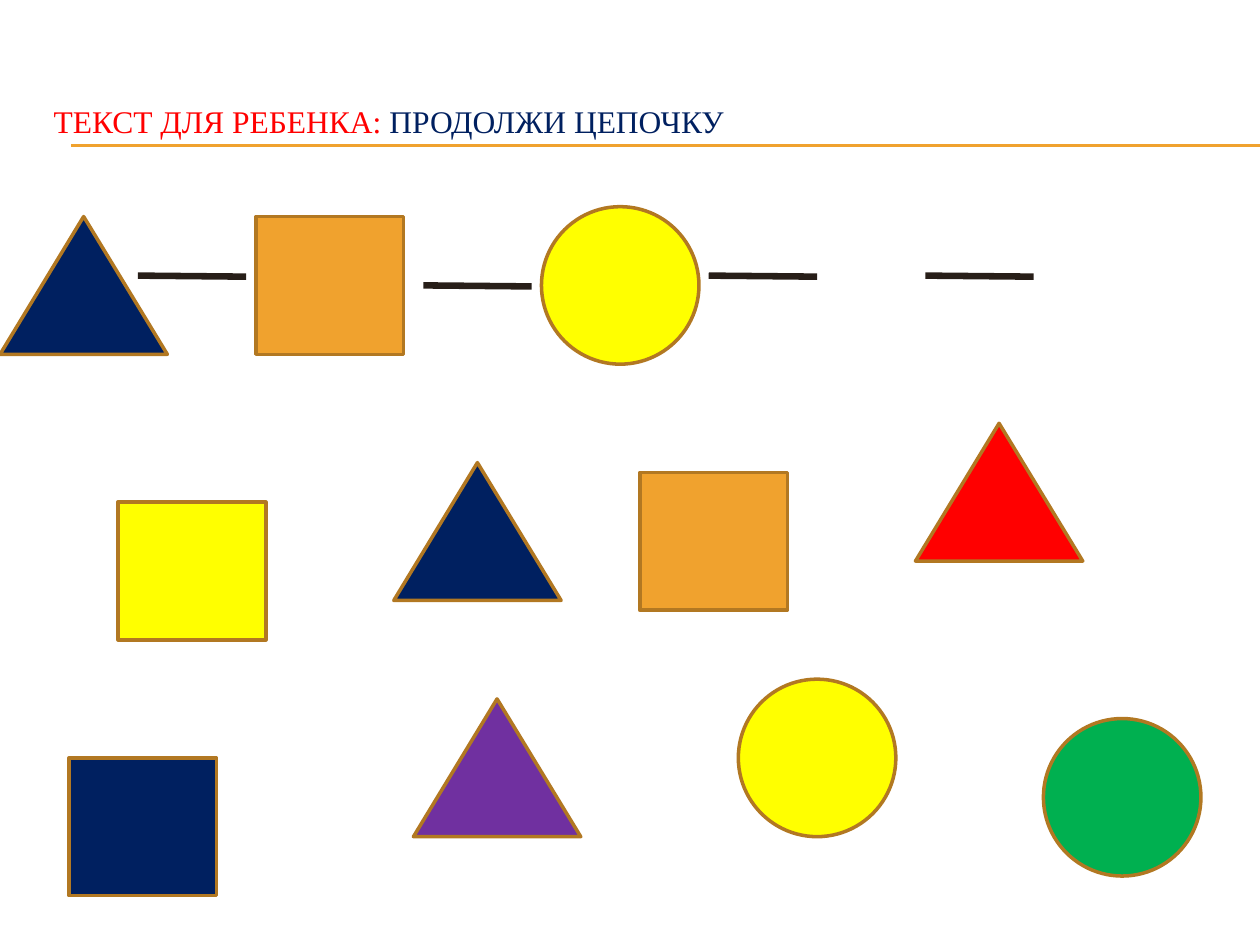
from pptx import Presentation
from pptx.dml.color import RGBColor
from pptx.enum.shapes import MSO_CONNECTOR, MSO_SHAPE
from pptx.enum.text import MSO_ANCHOR
from pptx.oxml.ns import qn
from pptx.util import Pt
from lxml import etree

HUES = {
    "navy": "002060", "orange": "F0A22E", "yellow": "FFFF00", "red": "FF0000",
    "green": "00B050", "purple": "7030A0", "edge": "B27822", "dash": "271E18",
}
# Preset, width and height of each kind of figure
KINDS = {
    "triangle": (MSO_SHAPE.ISOSCELES_TRIANGLE, 95.6, 78.75),
    "square": (MSO_SHAPE.RECTANGLE, 84.4, 78.75),
    "circle": (MSO_SHAPE.OVAL, 90, 90),
}


def tint(name):
    return RGBColor.from_string(HUES[name])


def draw_line(x1, y1, x2, y2, hue, width):
    line = slide.shapes.add_connector(
        MSO_CONNECTOR.STRAIGHT, Pt(x1), Pt(y1), Pt(x2), Pt(y2))
    line.line.color.rgb = tint(hue)
    line.line.width = Pt(width)
    etree.SubElement(line._element.spPr, qn("a:effectLst"))


deck = Presentation()
deck.slide_width, deck.slide_height = Pt(720), Pt(540)
slide = deck.slides.add_slide(deck.slide_layouts[6])

# Double rule under the title
for y in (82.8, 83.4):
    draw_line(40.5, y, 720, y, "orange", 0.75)

# Title
box = slide.shapes.add_textbox(Pt(23.6), Pt(36), Pt(684), Pt(66.4))
frame = box.text_frame
frame.word_wrap = True
frame.vertical_anchor = MSO_ANCHOR.MIDDLE
for text, hue in (("ТЕКСТ ДЛЯ РЕБЕНКА: ", "red"), ("ПРОДОЛЖИ ЦЕПОЧКУ", "navy")):
    run = frame.paragraphs[0].add_run()
    run.text = text
    run.font.name = "Times New Roman"
    run.font.size = Pt(18)
    run.font.color.rgb = tint(hue)

# Figures: the chain on top, then the choices below
figures = [
    ("triangle", "navy", 0, 123.75),
    ("square", "orange", 146.25, 123.75),
    ("circle", "yellow", 309.4, 118.1),
    ("triangle", "navy", 225, 264.4),
    ("circle", "yellow", 421.9, 388.1),
    ("square", "orange", 365.6, 270),
    ("square", "yellow", 67.5, 286.9),
    ("triangle", "red", 523.1, 241.9),
    ("square", "navy", 39.4, 433.1),
    ("circle", "green", 596.25, 410.6),
    ("triangle", "purple", 236.25, 399.4),
]
for kind, hue, x, y in figures:
    preset, wide, high = KINDS[kind]
    shape = slide.shapes.add_shape(preset, Pt(x), Pt(y), Pt(wide), Pt(high))
    shape.shadow.inherit = False
    shape.fill.solid()
    shape.fill.fore_color.rgb = tint(hue)
    shape.line.color.rgb = tint("edge")
    shape.line.width = Pt(2)

# Dashes that link the chain
for x, y in ((78.75, 157.5), (241.9, 163.1), (405, 157.5), (528.75, 157.5)):
    draw_line(x, y, x + 61.9, y + 0.6, "dash", 3.75)

deck.save("out.pptx")
